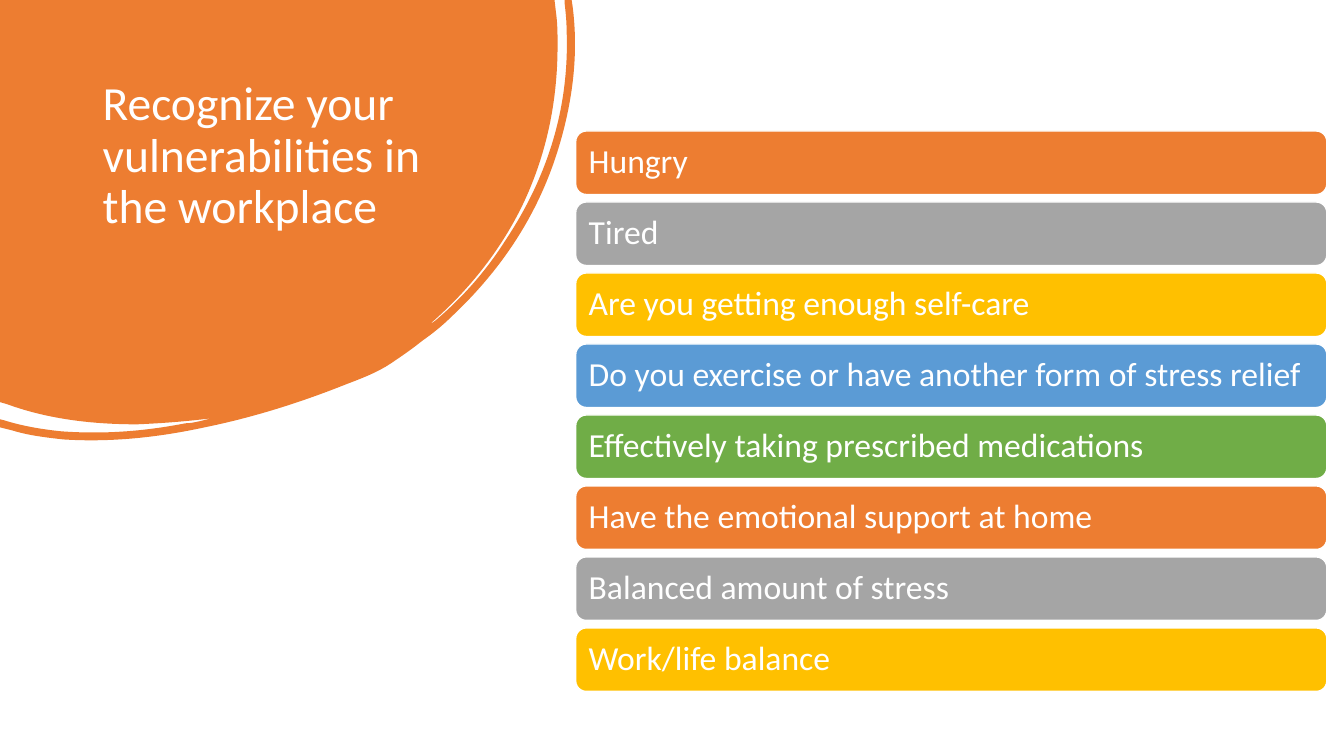
import lxml.etree
import pptx
import pptx.dml.color
import pptx.enum.shapes
import pptx.enum.text
import pptx.oxml.ns
import pptx.util

PX = 9144  # EMU; 100 px to the inch
RGB = pptx.dml.color.RGBColor
WHITE = RGB(0xFF, 0xFF, 0xFF)
ORANGE = RGB(0xED, 0x7D, 0x31)
GREY = RGB(0xA5, 0xA5, 0xA5)
GOLD = RGB(0xFF, 0xC0, 0x00)
BLUE = RGB(0x5B, 0x9B, 0xD5)
GREEN = RGB(0x70, 0xAD, 0x47)
BAR_COLOURS = [ORANGE, GREY, GOLD, BLUE, GREEN]
FONT = "Calibri"
TITLE = "Recognize your vulnerabilities in the workplace"
VULNERABILITIES = [
    "Hungry",
    "Tired",
    "Are you getting enough self-care",
    "Do you exercise or have another form of stress relief",
    "Effectively taking prescribed medications",
    "Have the emotional support at home",
    "Balanced amount of stress",
    "Work/life balance",
]
BAR_LEFT, BAR_WIDTH, BAR_HEIGHT = 571, 745, 63
FIRST_TOP, LAST_TOP = 130, 623

# Two numbers make a line to a point; six make a cubic curve.
BLOB_OUTLINE = [
    (0, 0), (550, 0), (552, 17),
    (553, 26, 553, 36, 553, 45),
    (553, 101, 542, 154, 518, 204),
    (496, 249, 465, 288, 427, 321),
    (429, 321, 430, 319, 432, 318),
    (459, 295, 482, 269, 501, 239),
    (543, 176, 565, 107, 562, 30),
    (562, 21, 561, 12, 560, 3),
    (560, 0), (567, 0), (568, 7),
    (574, 54, 568, 102, 553, 150),
    (533, 214, 497, 268, 448, 314),
    (439, 323, 429, 331, 419, 338),
    (409, 346, 399, 353, 387, 361),
    (375, 369, 360, 375, 344, 381),
    (299, 399, 252, 414, 203, 424),
    (157, 434, 110, 439, 63, 436),
    (45, 434, 28, 432, 12, 427),
    (0, 424), (0, 416), (4, 417),
    (23, 423, 42, 426, 61, 428),
    (103, 431, 143, 428, 184, 420),
    (189, 420, 193, 419, 198, 418),
    (202, 417, 206, 416, 210, 415),
    (186, 418, 161, 420, 136, 421),
    (92, 421, 48, 416, 7, 401),
    (0, 399),
]


def px(length):
    return pptx.util.Emu(round(length * PX))


def bend(line, controls):
    """Make a straight freeform segment a cubic curve with these control points."""
    qn = pptx.oxml.ns.qn
    line.tag = qn("a:cubicBezTo")
    for place in (0, 2):
        point = lxml.etree.Element(qn("a:pt"))
        point.set("x", str(controls[place]))
        point.set("y", str(controls[place + 1]))
        line.insert(place // 2, point)


def add_blob(page):
    corners = [segment[-2:] for segment in BLOB_OUTLINE]
    builder = page.shapes.build_freeform(*corners[0], scale=PX)
    builder.add_line_segments(corners[1:], close=True)
    blob = builder.convert_to_shape()
    lines = blob._element.xpath(".//a:lnTo")
    for line, segment in zip(lines, BLOB_OUTLINE[1:]):
        if len(segment) == 6:
            bend(line, segment[:4])
    blob.shadow.inherit = False
    blob.fill.solid()
    blob.fill.fore_color.rgb = ORANGE
    blob.line.fill.background()


def write(frame, text, size, anchor):
    frame.word_wrap = True
    frame.vertical_anchor = anchor
    para = frame.paragraphs[0]
    para.text = text
    para.alignment = pptx.enum.text.PP_ALIGN.LEFT
    para.line_spacing = 0.9
    para.font.name = FONT
    para.font.size = pptx.util.Pt(size)
    para.font.color.rgb = WHITE


def add_title(page):
    box = page.shapes.add_textbox(px(92), px(74), px(352), px(222))
    write(box.text_frame, TITLE, 34, pptx.enum.text.MSO_ANCHOR.TOP)


def add_bar(page, top, text, colour):
    bar = page.shapes.add_shape(
        pptx.enum.shapes.MSO_SHAPE.ROUNDED_RECTANGLE,
        px(BAR_LEFT), px(top), px(BAR_WIDTH), px(BAR_HEIGHT),
    )
    bar.shadow.inherit = False
    bar.fill.solid()
    bar.fill.fore_color.rgb = colour
    bar.line.color.rgb = WHITE
    bar.line.width = pptx.util.Pt(1)
    write(bar.text_frame, text, 24, pptx.enum.text.MSO_ANCHOR.MIDDLE)


def main():
    deck = pptx.Presentation()
    deck.slide_width = px(1333)
    deck.slide_height = px(750)
    page = deck.slides.add_slide(deck.slide_layouts[6])
    add_blob(page)
    add_title(page)
    pitch = (LAST_TOP - FIRST_TOP) / (len(VULNERABILITIES) - 1)
    for index, text in enumerate(VULNERABILITIES):
        colour = BAR_COLOURS[index % len(BAR_COLOURS)]
        add_bar(page, FIRST_TOP + index * pitch, text, colour)
    deck.save("out.pptx")


if __name__ == "__main__":
    main()
